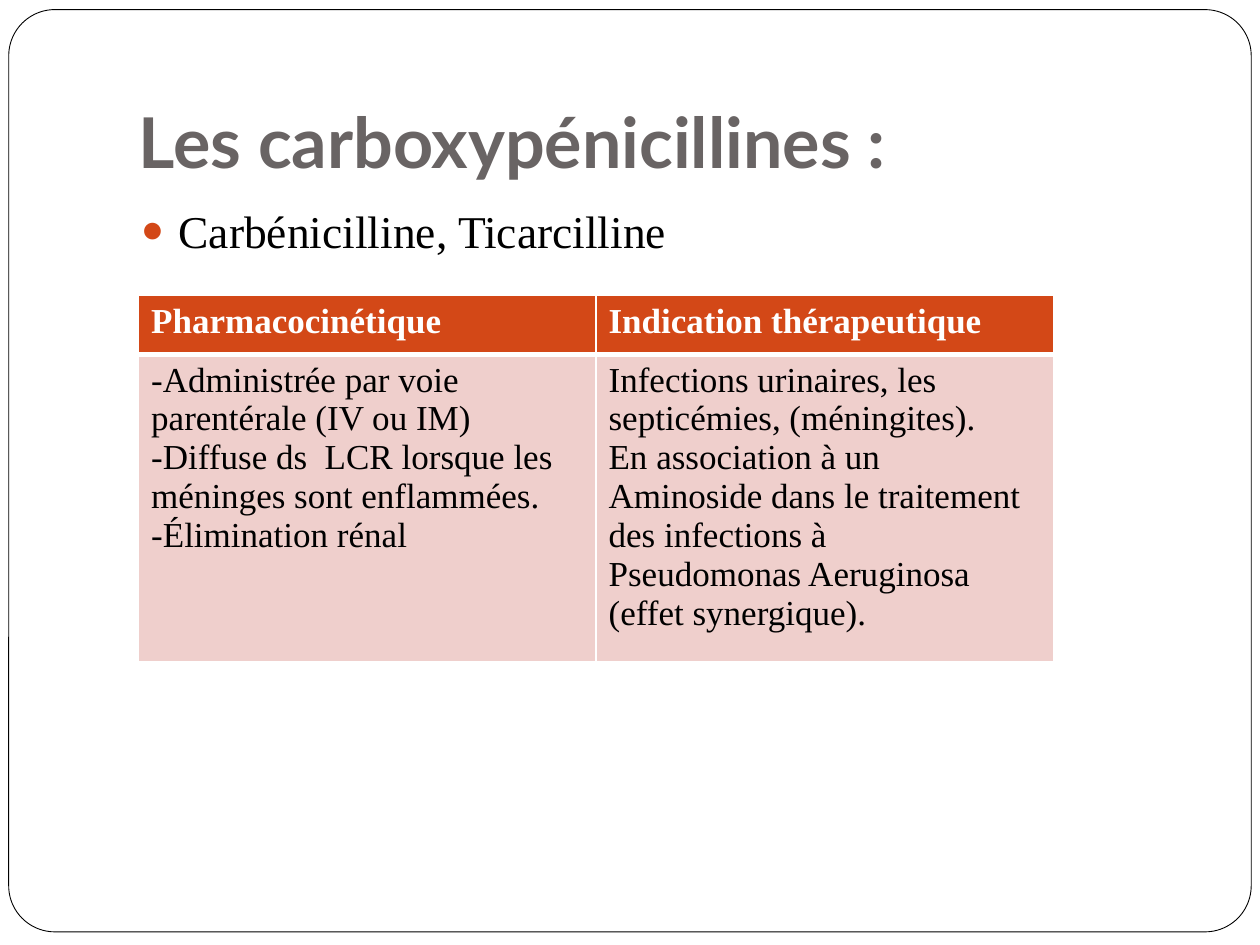
import pptx
import pptx.dml.color
import pptx.enum.shapes
import pptx.enum.text
import pptx.oxml
import pptx.oxml.ns
import pptx.util
from lxml import etree

Pt = pptx.util.Pt
COLOURS = {
    "white": "FFFFFF",
    "black": "000000",
    "title": "696464",
    "accent": "D34817",
    "cell": "EFCFCC",
}


def colour(name):
    return pptx.dml.color.RGBColor.from_string(COLOURS[name])


def add_xml(parent, tag, **attributes):
    return etree.SubElement(parent, pptx.oxml.ns.qn(tag), attributes)


def write(para, text, size=20, font="Times New Roman", ink="black", bold=False):
    span = para.add_run()
    span.text = text
    span.font.size = Pt(size)
    span.font.name = font
    span.font.bold = bold
    span.font.color.rgb = colour(ink)


class SlideBuilder:
    title_font = "Lato"

    def __init__(self, deck):
        self.page = deck.slides.add_slide(deck.slide_layouts[5])

    def title(self, text, left, top, width, height):
        box = self.page.shapes.title
        box.left, box.top, box.width, box.height = map(Pt, (left, top, width, height))
        frame = box.text_frame
        frame.word_wrap = True
        frame.auto_size = pptx.enum.text.MSO_AUTO_SIZE.NONE
        frame.vertical_anchor = pptx.enum.text.MSO_ANCHOR.BOTTOM
        frame.margin_left = frame.margin_right = frame.margin_bottom = Pt(7.2)
        frame.margin_top = Pt(3.6)
        para = frame.paragraphs[0]
        para.alignment = pptx.enum.text.PP_ALIGN.LEFT
        write(para, text, size=40, font=self.title_font, ink="title", bold=True)

    def border(self, left, top, width, height):
        """Draw the rounded page frame behind everything else."""
        box = self.page.shapes.add_shape(
            pptx.enum.shapes.MSO_SHAPE.ROUNDED_RECTANGLE,
            *map(Pt, (left, top, width, height)))
        box.adjustments[0] = 0.05
        box.shadow.inherit = False
        box.fill.solid()
        box.fill.fore_color.rgb = colour("white")
        box.line.color.rgb = colour("black")
        box.line.width = Pt(0.5)
        self.page.shapes.title.element.addprevious(box.element)

    def bullet(self, text, left, top, width, height):
        box = self.page.shapes.add_textbox(*map(Pt, (left, top, width, height)))
        box.text_frame.word_wrap = True
        para = box.text_frame.paragraphs[0]
        para.space_before = Pt(5.8)
        write(para, text, size=26)
        properties = para._p.get_or_add_pPr()
        indent = Pt(21.6)
        properties.set("marL", str(indent))
        properties.set("indent", str(-indent))
        bullet_colour = add_xml(properties, "a:buClr")
        add_xml(bullet_colour, "a:srgbClr", val=COLOURS["accent"])
        add_xml(properties, "a:buSzPct", val="85000")
        add_xml(properties, "a:buFont", typeface="Times New Roman")
        add_xml(properties, "a:buChar", char="●")

    def table(self, rows, left, top, width, heights):
        """Each cell is a list of paragraphs; the first row is the header."""
        table = self.page.shapes.add_table(
            len(rows), len(rows[0]), *map(Pt, (left, top, width, sum(heights)))).table
        for row, height in zip(table.rows, heights):
            row.height = Pt(height)
        for r, row in enumerate(rows):
            header = r == 0
            for c, lines in enumerate(row):
                cell = table.cell(r, c)
                cell.fill.solid()
                cell.fill.fore_color.rgb = colour("accent" if header else "cell")
                frame = cell.text_frame
                for i, line in enumerate(lines):
                    para = frame.add_paragraph() if i else frame.paragraphs[0]
                    write(para, line, ink="white" if header else "black", bold=header)
                self.cell_borders(cell, L=1, R=1, T=1 if header else 3, B=3 if header else 1)

    def cell_borders(self, cell, **widths):
        properties = cell._tc.get_or_add_tcPr()
        for position, (side, width) in enumerate(widths.items()):
            line = add_xml(properties, f"a:ln{side}", w=str(Pt(width)))
            fill = add_xml(line, "a:solidFill")
            add_xml(fill, "a:srgbClr", val=COLOURS["white"])
            properties.insert(position, line)


def main():
    deck = pptx.Presentation()
    deck.slide_width, deck.slide_height = Pt(720), Pt(540)
    slide = SlideBuilder(deck)
    slide.border(5, 5.5, 710, 527)
    slide.title("Les carboxypénicillines :", 72, 21.6, 612, 90)
    slide.bullet("Carbénicilline, Ticarcilline", 73.4, 112.3, 612, 360)
    slide.table(
        [
            [["Pharmacocinétique"], ["Indication thérapeutique"]],
            [
                [
                    "-Administrée par voie parentérale (IV ou IM)",
                    "-Diffuse ds  LCR lorsque les méninges sont enflammées.",
                    "-Élimination rénal",
                ],
                [
                    "Infections urinaires, les septicémies, (méningites).",
                    "En association à un Aminoside dans le traitement des infections à",
                    "Pseudomonas Aeruginosa (effet synergique).",
                ],
            ],
        ],
        79.2, 168.8, 522.8, [33.8, 151])
    deck.save("out.pptx")


if __name__ == "__main__":
    main()
